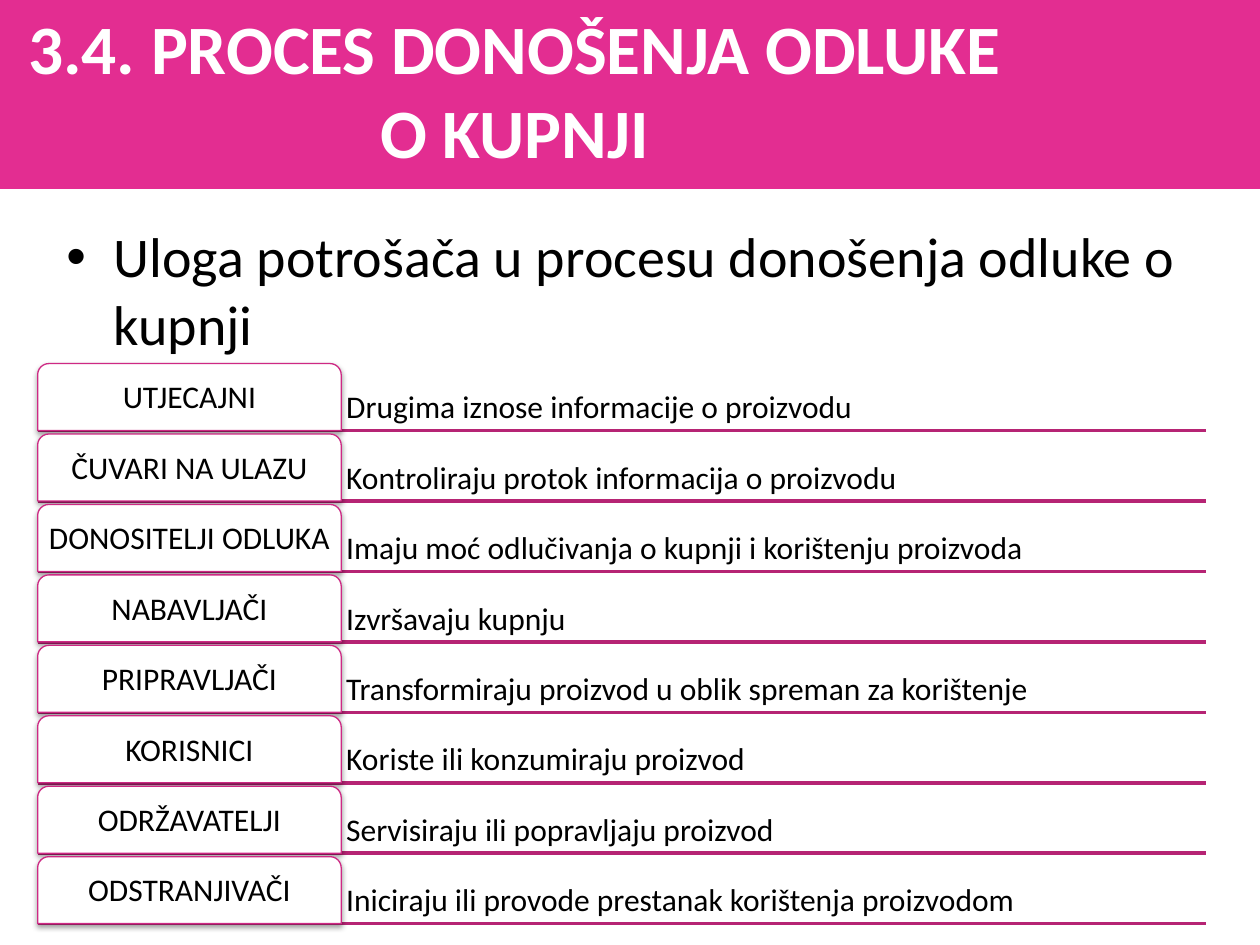
from lxml.etree import SubElement
from pptx import Presentation
from pptx.dml.color import RGBColor
from pptx.enum.shapes import MSO_CONNECTOR, MSO_SHAPE
from pptx.enum.text import MSO_ANCHOR, MSO_AUTO_SIZE, PP_ALIGN
from pptx.oxml.ns import qn
from pptx.util import Cm, Pt

PINK, RULE, BORDER = "E32D91", "B62474", "CE2984"
WHITE, BLACK = "FFFFFF", "000000"
LEFT, RIGHT, LABEL_W = 0.76, 24.31, 6.12
TOP, PITCH, ROW_H = 7.33, 1.42, 1.35

ROLES = [
    ("UTJECAJNI", "Drugima iznose informacije o proizvodu"),
    ("ČUVARI NA ULAZU", "Kontroliraju protok informacija o proizvodu"),
    ("DONOSITELJI ODLUKA", "Imaju moć odlučivanja o kupnji i korištenju proizvoda"),
    ("NABAVLJAČI", "Izvršavaju kupnju"),
    ("PRIPRAVLJAČI", "Transformiraju proizvod u oblik spreman za korištenje"),
    ("KORISNICI", "Koriste ili konzumiraju proizvod"),
    ("ODRŽAVATELJI", "Servisiraju ili popravljaju proizvod"),
    ("ODSTRANJIVAČI", "Iniciraju ili provode prestanak korištenja proizvodom"),
]


def rgb(value):
    return RGBColor.from_string(value)


def apply(target, values):
    for name, value in values.items():
        setattr(target, name, value)


class Deck:
    font = "Calibri"
    margins = ("margin_left", "margin_top", "margin_right", "margin_bottom")

    def __init__(self, prs):
        self.s = prs.slides.add_slide(prs.slide_layouts[5])

    def fill_text(self, sp, text, size, color=BLACK, bold=False, anchor=MSO_ANCHOR.TOP,
                  inset=None, **paragraph):
        tf = sp.text_frame
        apply(tf, {"word_wrap": True, "auto_size": MSO_AUTO_SIZE.NONE,
                   "vertical_anchor": anchor})
        if inset is not None:
            apply(tf, dict.fromkeys(self.margins, Cm(inset)))
        p = tf.paragraphs[0]
        apply(p, paragraph)
        r = p.add_run()
        r.text = text
        apply(r.font, {"name": self.font, "size": Pt(size), "bold": bold})
        r.font.color.rgb = rgb(color)
        return p

    def box(self, kind, x, y, w, h, fill, line=None):
        sp = self.s.shapes.add_shape(kind, Cm(x), Cm(y), Cm(w), Cm(h))
        sp.shadow.inherit = False
        sp.fill.solid()
        sp.fill.fore_color.rgb = rgb(fill)
        if line:
            sp.line.color.rgb = rgb(line)
            sp.line.width = Pt(0.75)
        else:
            sp.line.fill.background()
        return sp

    def title(self, text, x, y, w, h):
        sp = self.s.shapes.title
        apply(sp, {"left": Cm(x), "top": Cm(y), "width": Cm(w), "height": Cm(h)})
        self.fill_text(sp, text, 39.6, WHITE, True, MSO_ANCHOR.MIDDLE,
                       alignment=PP_ALIGN.CENTER)

    def band(self, w, h):
        sp = self.box(MSO_SHAPE.RECTANGLE, 0, 0, w, h, PINK)
        self.s.shapes.title._element.addprevious(sp._element)

    def text(self, text, x, y, w, h, size, **style):
        sp = self.s.shapes.add_textbox(Cm(x), Cm(y), Cm(w), Cm(h))
        return self.fill_text(sp, text, size, **style)

    def bullet(self, text, x, y, w, h):
        p = self.text(text, x, y, w, h, 32)
        pPr = p._p.get_or_add_pPr()
        pPr.set("marL", str(Cm(0.95)))
        pPr.set("indent", str(-Cm(0.95)))
        SubElement(pPr, qn("a:buFont"), typeface="Arial")
        SubElement(pPr, qn("a:buChar"), char="•")

    def rule(self, x1, x2, y):
        sp = self.s.shapes.add_connector(MSO_CONNECTOR.STRAIGHT, Cm(x1), Cm(y), Cm(x2), Cm(y))
        sp.line.color.rgb = rgb(RULE)
        sp.line.width = Pt(2)
        SubElement(sp._element.spPr, qn("a:effectLst"))

    def label(self, text, x, y, w, h):
        sp = self.box(MSO_SHAPE.ROUND_2_SAME_RECTANGLE, x, y, w, h, WHITE, BORDER)
        effects = sp._element.spPr.find(qn("a:effectLst"))
        shadow = SubElement(effects, qn("a:outerShdw"), blurRad=str(Pt(3.1)),
                            dist=str(Pt(1.6)), dir="5400000", rotWithShape="0")
        color = SubElement(shadow, qn("a:srgbClr"), val=BLACK)
        SubElement(color, qn("a:alpha"), val="38000")
        self.fill_text(sp, text, 18, anchor=MSO_ANCHOR.MIDDLE, inset=0.1,
                       alignment=PP_ALIGN.CENTER, line_spacing=0.9)


def main():
    prs = Presentation()
    prs.slide_width, prs.slide_height = Cm(25.4), Cm(19.05)
    deck = Deck(prs)
    deck.band(25.4, 3.81)
    deck.title("3.4. PROCES DONOŠENJA ODLUKE O KUPNJI", 0, 0.2, 20.75, 3.18)
    deck.bullet("Uloga potrošača u procesu donošenja odluke o kupnji", 1.09, 4.35, 22.86, 12.57)
    tops = [TOP + i * PITCH for i in range(len(ROLES))]
    for y in tops:
        deck.rule(LEFT, RIGHT, y + ROW_H)
    text_x = LEFT + LABEL_W
    for y, (role, duty) in zip(tops, ROLES):
        deck.text(duty, text_x, y, RIGHT - text_x, ROW_H, 18,
                  anchor=MSO_ANCHOR.BOTTOM, inset=0.1, line_spacing=0.9)
        deck.label(role, LEFT, y, LABEL_W, ROW_H)
    prs.save("out.pptx")


if __name__ == "__main__":
    main()
